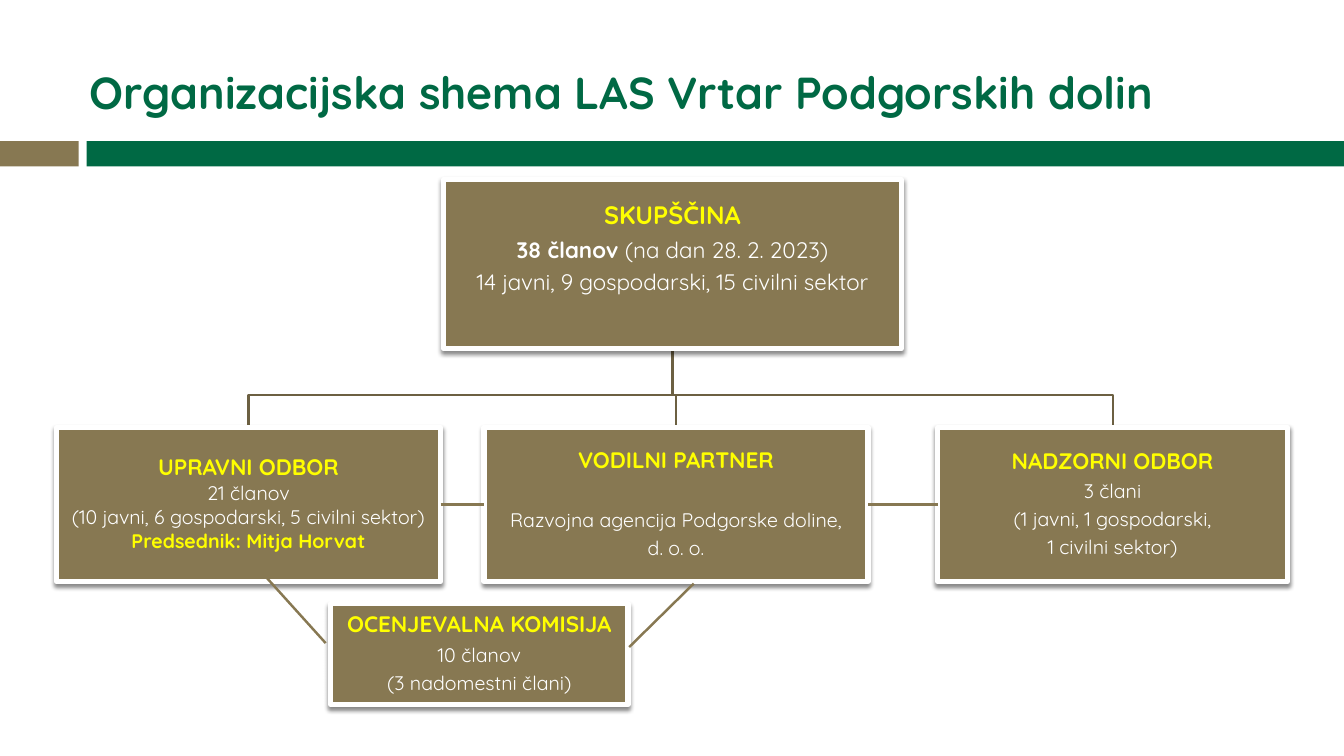
from lxml.etree import SubElement
from pptx import Presentation
from pptx.dml.color import RGBColor
from pptx.enum.shapes import MSO_CONNECTOR, MSO_SHAPE
from pptx.enum.text import MSO_ANCHOR, PP_ALIGN
from pptx.oxml.ns import qn
from pptx.util import Inches, Pt

FONT = "Quicksand"
COLORS = {"green": "006944", "tan": "877852", "tree": "6C6042",
          "yellow": "FFFF00", "white": "FFFFFF", "black": "000000"}
TITLE = "Organizacijska shema LAS Vrtar Podgorskih dolin"
BARS = [(0, 0.78, "tan"), (0.86, 12.47, "green")]  # left, width, colour

HEAD = dict(size=16, color="yellow", bold=True)
# Each line is a list of (text, format) runs
BOXES = {
    "assembly": dict(at=(4.4, 1.78, 4.54, 1.68), bottom=0.31, lines=[
        [("SKUPŠČINA", dict(HEAD, size=18))],
        [("38 članov ", dict(size=16, bold=True)),
         ("(na dan 28. 2. 2023)", dict(size=16))],
        [("14 javni, 9 gospodarski, 15 civilni sektor", dict(size=16))]]),
    "board": dict(at=(0.56, 4.24, 3.81, 1.53), gap=2, lines=[
        [("UPRAVNI ODBOR", HEAD)],
        [("21 članov", {})],
        [("(10 javni, 6 gospodarski, 5 civilni sektor)", {})],
        [("Predsednik: Mitja Horvat", dict(color="yellow", bold=True))]]),
    "partner": dict(at=(4.8, 4.24, 3.81, 1.53), head_gap=27, lines=[
        [("VODILNI PARTNER", HEAD)],
        [("Razvojna agencija Podgorske doline,", {})],
        [("d. o. o.", {})]]),
    "supervisors": dict(at=(9.3, 4.24, 3.47, 1.53), lines=[
        [("NADZORNI ODBOR", HEAD)],
        [("3 člani", {})],
        [("(1 javni, 1 gospodarski,", {})],
        [("1 civilni sektor)", {})]]),
    "commission": dict(at=(3.28, 5.99, 2.95, 1), lines=[
        [("OCENJEVALNA KOMISIJA", HEAD)],
        [("10 članov", {})],
        [("(3 nadomestni člani)", {})]]),
}
BRANCHES = ["supervisors", "partner", "board"]
FORK_Y = 3.92
SIDE_LINKS = [("board", "partner"), ("partner", "supervisors")]
DIAGONALS = [(3.23, 6.38, 2.58, 5.66), (6.24, 6.42, 6.88, 5.79)]


def rgb(name):
    return RGBColor.from_string(COLORS[name])


def add_run(p, text, size=14, color="white", bold=False):
    r = p.add_run()
    r.text = text
    r.font.name, r.font.size, r.font.bold = FONT, Pt(size), bold
    r.font.color.rgb = rgb(color)


def add_rect(s, at, fill):
    sp = s.shapes.add_shape(MSO_SHAPE.RECTANGLE, *map(Inches, at))
    sp.shadow.inherit = False
    sp.fill.solid()
    sp.fill.fore_color.rgb = rgb(fill)
    sp.line.fill.background()
    return sp


def add_shadow(sp):
    effects = sp._element.spPr.find(qn("a:effectLst"))
    shadow = SubElement(effects, qn("a:outerShdw"), blurRad=str(Pt(3)),
                        dist=str(Pt(2.4)), dir="5400000", rotWithShape="0")
    color = SubElement(shadow, qn("a:srgbClr"), val=COLORS["black"])
    SubElement(color, qn("a:alpha"), val="45000")


def add_box(s, at, lines, gap=None, head_gap=None, bottom=0.01):
    sp = add_rect(s, at, "tan")
    sp.line.color.rgb, sp.line.width = rgb("white"), Pt(3.75)
    add_shadow(sp)
    tf = sp.text_frame
    tf.word_wrap, tf.vertical_anchor = True, MSO_ANCHOR.MIDDLE
    tf.margin_left = tf.margin_right = tf.margin_top = Inches(0.01)
    tf.margin_bottom = Inches(bottom)
    for i, runs in enumerate(lines):
        p = tf.add_paragraph() if i else tf.paragraphs[0]
        p.alignment, p.line_spacing = PP_ALIGN.CENTER, 0.9
        size = runs[0][1].get("size", 14)
        after = gap or round(size * 0.35, 1)
        p.space_after = Pt(head_gap if head_gap and i == 0 else after)
        for text, fmt in runs:
            add_run(p, text, **fmt)
    return sp


def add_branch(s, parent, child):
    (px, py, pw, ph), (cx, cy, cw, _) = parent, child
    start, end = px + pw / 2, cx + cw / 2
    points = [(start, py + ph), (start, FORK_Y), (end, FORK_Y), (end, cy)]
    points = [(Inches(x), Inches(y)) for x, y in points]
    builder = s.shapes.build_freeform(*points[0])
    builder.add_line_segments(points[1:], close=False)
    sp = builder.convert_to_shape()
    sp.shadow.inherit = False
    sp.fill.background()
    sp.line.color.rgb, sp.line.width = rgb("tree"), Pt(1.5)


def add_link(s, x1=0, y1=0, x2=0, y2=0):
    c = s.shapes.add_connector(MSO_CONNECTOR.STRAIGHT,
                               *map(Inches, (x1, y1, x2, y2)))
    c.line.color.rgb, c.line.width = rgb("tan"), Pt(1.75)
    SubElement(c._element.spPr, qn("a:effectLst"))
    return c


def main():
    prs = Presentation()
    prs.slide_width, prs.slide_height = Inches(13.33), Inches(7.5)
    s = prs.slides.add_slide(prs.slide_layouts[5])

    title = s.shapes.title
    title.left, title.top = Inches(0.79), Inches(0.51)
    title.width, title.height = Inches(12.11), Inches(0.8)
    tf = title.text_frame
    tf.word_wrap, tf.vertical_anchor = True, MSO_ANCHOR.MIDDLE
    p = tf.paragraphs[0]
    p.alignment = PP_ALIGN.LEFT
    add_run(p, TITLE, size=32, color="green", bold=True)

    for left, width, color in BARS:
        add_rect(s, (left, 1.4, width, 0.25), color)
    for name in BRANCHES:
        add_branch(s, BOXES["assembly"]["at"], BOXES[name]["at"])
    boxes = {name: add_box(s, **box) for name, box in BOXES.items()}
    for left, right in SIDE_LINKS:
        c = add_link(s)
        c.begin_connect(boxes[left], 3)
        c.end_connect(boxes[right], 1)
    for ends in DIAGONALS:
        add_link(s, *ends)
    prs.save("out.pptx")


if __name__ == "__main__":
    main()
